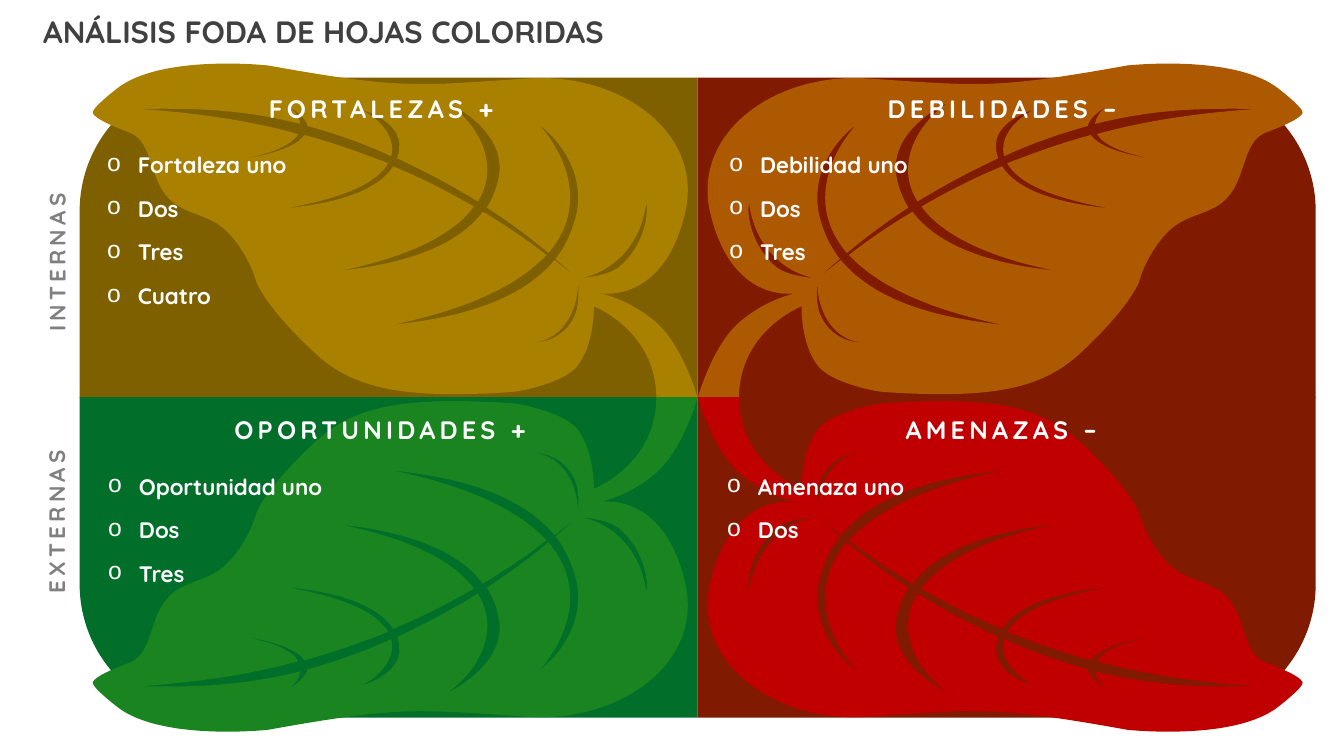
from lxml import etree
from pptx import Presentation
from pptx.dml.color import RGBColor
from pptx.enum.shapes import MSO_SHAPE
from pptx.enum.text import MSO_AUTO_SIZE, PP_ALIGN
from pptx.oxml.ns import qn
from pptx.util import Inches, Pt

ROUND = MSO_SHAPE.ROUND_1_RECTANGLE
GROW = MSO_AUTO_SIZE.SHAPE_TO_FIT_TEXT
CENTER, LEFT = PP_ALIGN.CENTER, PP_ALIGN.LEFT
FONT, WHITE, GRAY, DARK = "Quicksand", "FFFFFF", "808080", "404040"

# Content: heading, its place, items, their place, panel and leaf colours
TITLE = "ANÁLISIS FODA DE HOJAS COLORIDAS"
SIDES = [("EXTERNAS", -0.53, 4.99, 2.18), ("INTERNAS", -0.59, 2.42, 2.31)]
PARTS = [
    ("FORTALEZAS +", (0.79, 0.88), ["Fortaleza uno", "Dos", "Tres", "Cuatro"],
     (0.96, 1.45), "7F6000", "AA8000"),
    ("DEBILIDADES –", (6.95, 0.88), ["Debilidad uno", "Dos", "Tres"],
     (7.13, 1.45), "801A00", "AD5902"),
    ("OPORTUNIDADES +", (0.78, 4.06), ["Oportunidad uno", "Dos", "Tres"],
     (0.97, 4.64), "016F2A", "198420"),
    ("AMENAZAS –", (6.94, 4.06), ["Amenaza uno", "Dos"],
     (7.11, 4.64), "801A00", "C00000"),
]

# Top left leaf: start point, then curves (six numbers) or lines (two)
EDGE = [
    (6.51, 3.2), (6.23, 2.96, 5.95, 2.91, 5.95, 2.91),
    (5.95, 2.91, 6.59, 3.03, 6.8, 2.09), (6.97, 1.3, 6.13, 0.71, 5.22, 0.78),
    (4.14, 0.85, 3.99, 0.89, 2.66, 0.65), (2.66, 0.65, 1.66, 0.54, 1.2, 0.85),
    (1.17, 0.87, 0.91, 1.07, 0.92, 1.12), (0.94, 1.18, 1.14, 1.26, 1.27, 1.31),
    (1.55, 1.4, 1.45, 1.84, 1.76, 2.04), (1.93, 2.14, 2.06, 2.14, 2.21, 2.26),
    (2.39, 2.41, 2.51, 2.67, 2.54, 2.79), (2.54, 2.79, 2.61, 3.02, 3.11, 3.49),
    (3.5, 3.86, 3.99, 3.96, 5.07, 3.89), (5.2, 3.88, 5.59, 3.79, 5.72, 3.64),
    (5.9, 3.42, 5.89, 3.04, 5.89, 3.04), (5.89, 3.04, 6.51, 3.28, 6.51, 3.95),
    (6.92, 3.95), (6.92, 3.95, 6.78, 3.44, 6.51, 3.2),
]
VEINS = [
    (5.73, 2.76), (5.73, 2.78),
    (5.74, 2.85, 5.75, 3.02, 5.7, 3.13), (5.58, 3.4, 5.31, 3.4, 5.27, 3.4),
    (5.63, 3.38, 5.75, 2.99, 5.73, 2.78), (5.73, 2.76),
    (5.5, 2.58), (5.04, 3.14, 4.08, 3.19, 3.86, 3.23),
    (4.7, 3.06, 5.17, 2.8, 5.42, 2.53), (5.23, 2.38, 5.02, 2.24, 4.79, 2.1),
    (4.42, 2.6, 3.53, 2.66, 3.36, 2.69), (4.11, 2.54, 4.52, 2.3, 4.7, 2.05),
    (4.46, 1.91, 4.19, 1.77, 3.9, 1.65), (3.68, 2, 2.96, 2.05, 2.82, 2.07),
    (3.45, 1.96, 3.75, 1.8, 3.85, 1.62), (3.59, 1.52, 3.32, 1.42, 3.02, 1.34),
    (2.9, 1.51, 2.45, 1.57, 2.38, 1.58), (2.73, 1.52, 2.9, 1.43, 2.96, 1.33),
    (2.49, 1.2, 1.96, 1.12, 1.37, 1.08), (1.8, 1.08, 2.31, 1.06, 2.98, 1.23),
    (2.97, 1.16, 2.92, 1.09, 2.84, 1.04),
    (2.91, 1.08, 3.04, 1.17, 3.05, 1.25), (3.3, 1.32, 3.58, 1.41, 3.88, 1.55),
    (3.93, 1.37, 3.78, 1.19, 3.59, 1.09), (3.59, 1.09, 3.99, 1.2, 3.96, 1.47),
    (3.96, 1.51, 3.95, 1.54, 3.94, 1.57), (4.06, 1.63, 4.19, 1.69, 4.32, 1.76),
    (4.47, 1.84, 4.61, 1.92, 4.74, 2), (4.97, 1.63, 4.74, 1.23, 4.44, 1.02),
    (4.44, 1.02, 5.02, 1.28, 4.95, 1.74), (4.93, 1.86, 4.89, 1.96, 4.83, 2.06),
    (5.06, 2.21, 5.26, 2.36, 5.44, 2.51), (5.85, 2.03, 5.59, 1.51, 5.35, 1.24),
    (5.35, 1.24, 5.82, 1.57, 5.72, 2.11), (5.68, 2.29, 5.61, 2.44, 5.51, 2.57),
    (5.73, 2.76), (5.94, 2.75, 6.34, 2.54, 6.41, 2.02),
    (6.43, 2.07, 6.42, 2.41, 6.14, 2.65), (6.01, 2.75, 5.73, 2.76, 5.73, 2.76),
]
WIDE, HIGH = 13.84, 7.89  # sums of mirrored x and y

deck = Presentation()
deck.slide_width, deck.slide_height = Inches(13.33), Inches(7.5)
shapes = deck.slides.add_slide(deck.slide_layouts[6]).shapes


def color(code):
    return RGBColor.from_string(code)


def paint(shape, code):
    shape.shadow.inherit = False
    shape.fill.solid()
    shape.fill.fore_color.rgb = color(code)
    shape.line.fill.background()


def panel(right, low, code):
    box = shapes.add_shape(ROUND, Inches(6.92 if right else 0.79),
                           Inches(3.94 if low else 0.77), Inches(6.13), Inches(3.18))
    box.adjustments[0] = 0.416
    xfrm = box._element.spPr.find(qn("a:xfrm"))
    if not right:
        xfrm.set("flipH", "1")
    if low:
        xfrm.set("flipV", "1")
    paint(box, code)


def leaf(right, low, code):
    def place(seg):
        return [(Inches(WIDE - x if right else x), Inches(HIGH - y if low else y))
                for x, y in zip(seg[::2], seg[1::2])]

    edge, veins = ([place(seg) for seg in path] for path in (EDGE, VEINS))
    pen = shapes.build_freeform(*edge[0][0])
    pen.add_line_segments([seg[-1] for seg in edge[1:]])
    pen.move_to(*veins[0][0])
    pen.add_line_segments([seg[-1] for seg in veins[1:]])
    shape = pen.convert_to_shape()
    # Bend the straight pieces into curves
    lines = list(shape._element.iter(qn("a:lnTo")))
    for line, seg in zip(lines, edge[1:] + veins[1:]):
        if len(seg) == 3:
            curve = etree.Element(qn("a:cubicBezTo"))
            for x, y in seg:
                etree.SubElement(curve, qn("a:pt"), x=str(x - shape.left),
                                 y=str(y - shape.top))
            line.getparent().replace(line, curve)
    paint(shape, code)


def bullet(para):
    props = para._p.get_or_add_pPr()
    props.set("marL", str(Inches(0.31)))
    props.set("indent", str(-Inches(0.31)))
    para.space_after = Pt(12)
    tint = etree.SubElement(props, qn("a:buClr"))
    etree.SubElement(tint, qn("a:srgbClr"), val=WHITE)
    etree.SubElement(props, qn("a:buSzPct"), val="110000")
    etree.SubElement(props, qn("a:buFont"), typeface="Courier New")
    etree.SubElement(props, qn("a:buChar"), char="o")


def write(lines, x, y, w, h, size, code, align=LEFT, gap=0, dots=False):
    box = shapes.add_textbox(Inches(x), Inches(y), Inches(w), Inches(h))
    frame = box.text_frame
    frame.word_wrap, frame.auto_size = True, GROW
    for i, line in enumerate(lines):
        para = frame.add_paragraph() if i else frame.paragraphs[0]
        para.text = line
        para.alignment = align
        if dots:
            bullet(para)
        font = para.font
        font.name, font.size, font.bold = FONT, Pt(size), True
        font.color.rgb = color(code)
        if gap:
            para._p.pPr.find(qn("a:defRPr")).set("spc", str(gap * 100))
    return box


# Panels, then the leaves over them
for draw, tone in ((panel, 4), (leaf, 5)):
    for n, part in enumerate(PARTS):
        draw(n % 2, n // 2, part[tone])

# Side labels
for name, x, y, w in SIDES:
    write([name], x, y, w, 0.37, 16, GRAY, CENTER, 3).rotation = 270

# Headings and lists
for head, spot, items, place, *_ in PARTS:
    write(items, *place, 5.83, 0.43 * len(items) - 0.04, 16, WHITE, dots=True)
    write([head], *spot, 5.98, 0.4, 18, WHITE, CENTER, 3)

write([TITLE], 0.33, 0.08, 9.67, 0.47, 22, DARK)
deck.save("out.pptx")
